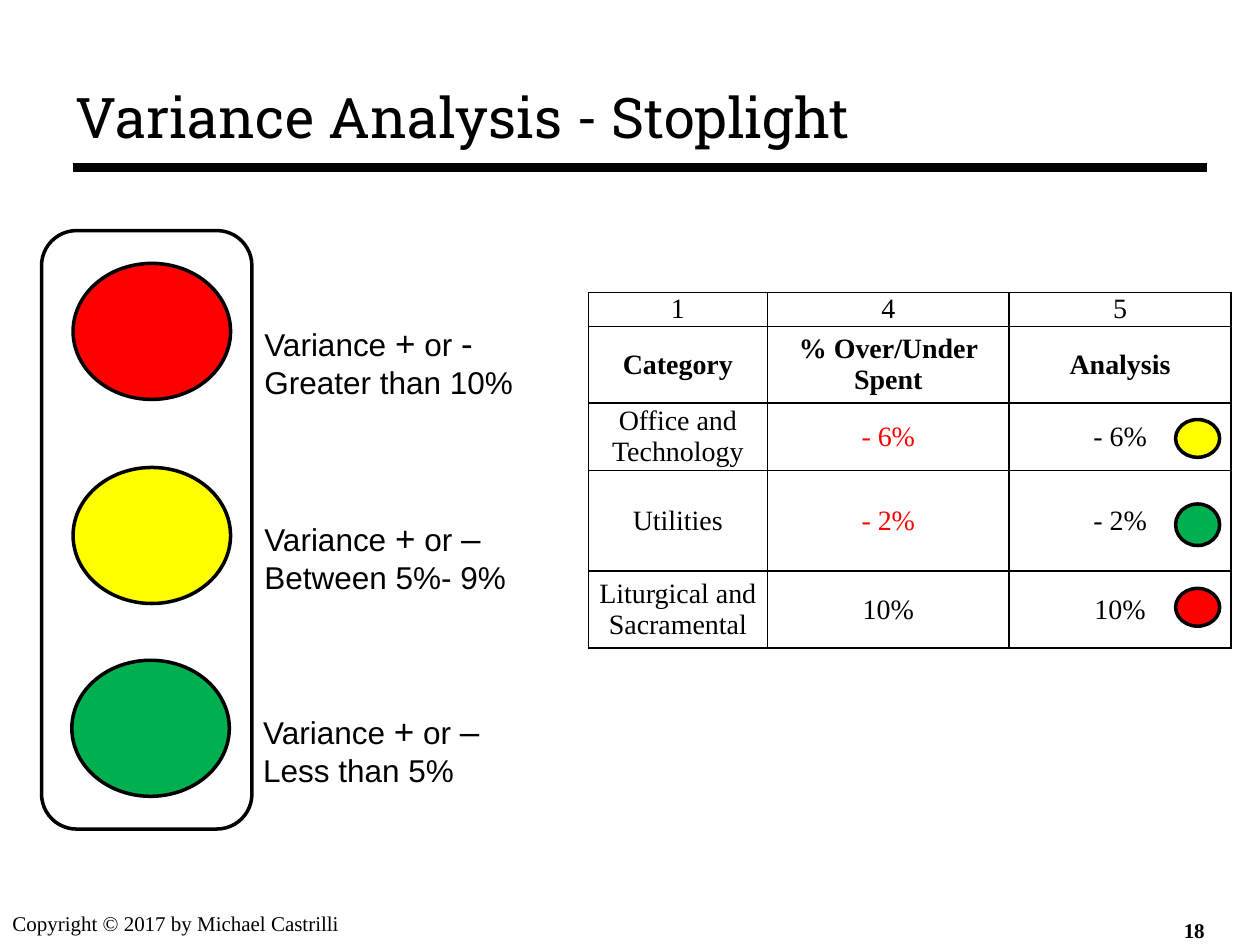
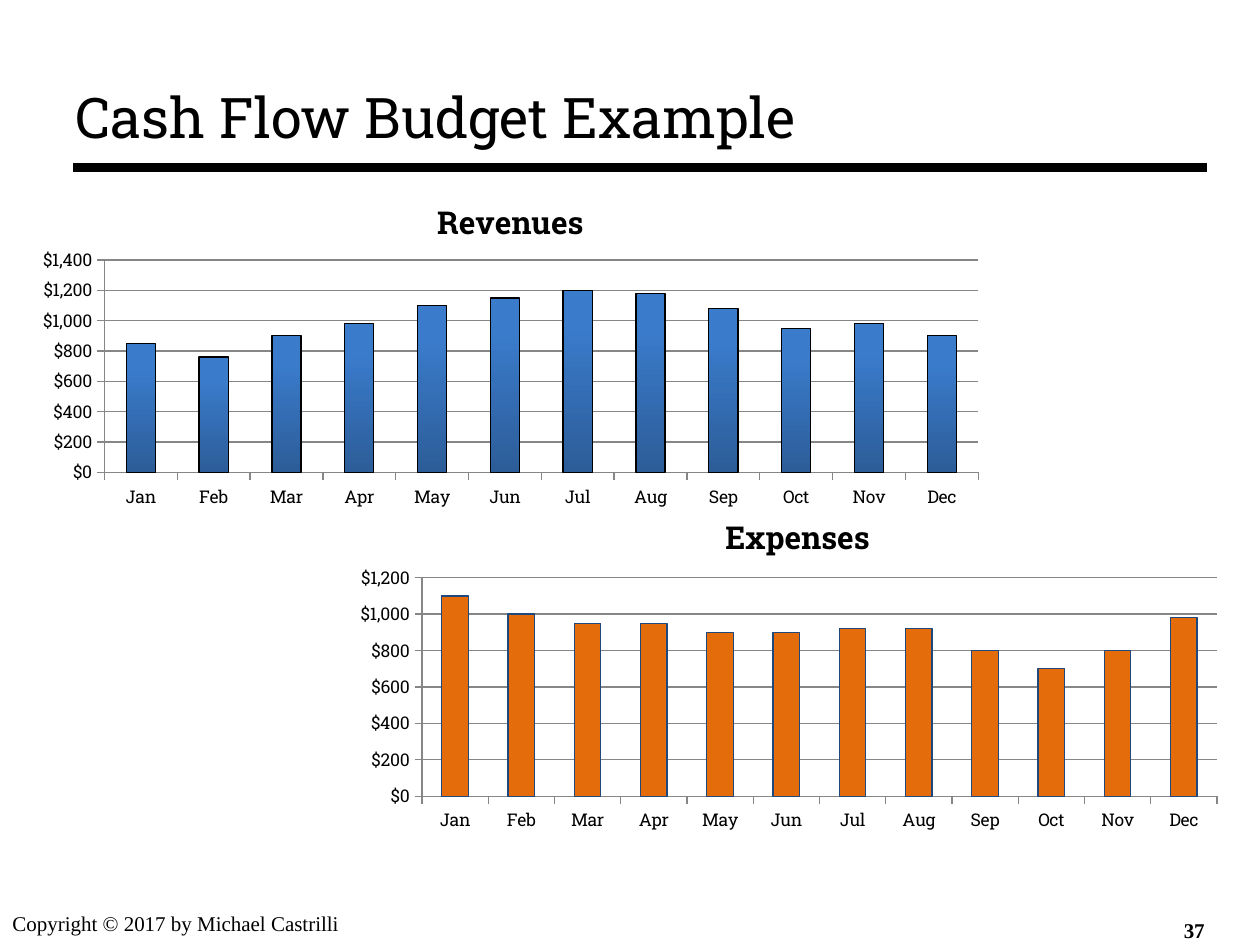
from pptx import Presentation
from pptx.chart.data import CategoryChartData
from pptx.dml.color import RGBColor
from pptx.enum.chart import XL_CHART_TYPE
from pptx.enum.shapes import MSO_CONNECTOR, MSO_SHAPE
from pptx.enum.text import MSO_ANCHOR, PP_ALIGN
from pptx.oxml import parse_xml
from pptx.oxml.ns import nsdecls, qn
from pptx.util import Inches, Pt

BLACK, WHITE, GREY = "000000", "FFFFFF", "868686"
RED, YELLOW, GREEN = "FF0000", "FFFF00", "00B050"
SLAB, SERIF, SANS = "Roboto Slab", "Times New Roman", "Arial"
MONTHS = "Jan Feb Mar Apr May Jun Jul Aug Sep Oct Nov Dec".split()
MONEY = '"$"#,##0;[Red]\\-"$"#,##0'


def tint(code):
    return RGBColor.from_string(code)


def put(item, **values):
    for key, value in values.items():
        setattr(item, key, value)


def inch(*sizes):
    return [Inches(size) for size in sizes]


def place(host, spot, **parts):
    for old in host.findall(qn("c:layout")):
        host.remove(old)
    tags = "".join(f'<c:{key} val="{value}"/>' for key, value in parts.items())
    host.insert(spot, parse_xml(
        f'<c:layout {nsdecls("c")}><c:manualLayout>{tags}</c:manualLayout></c:layout>'))


class Deck:
    def __init__(self):
        self.show = Presentation()
        put(self.show, slide_width=Inches(10), slide_height=Inches(7.5))
        self.slide = None

    def style(self, font, size, face, color=BLACK, bold=False):
        put(font, size=Pt(size), name=face, bold=bold)
        font.color.rgb = tint(color)

    def stroke(self, line, width, color=BLACK):
        line.color.rgb = tint(color)
        line.width = Pt(width)

    def page(self, title, number):
        self.slide = self.show.slides.add_slide(self.show.slide_layouts[5])
        self.text((0, 7.18, 4.08, 0.4),
                  [[("Copyright © 2017 by Michael Castrilli", 12)]], SERIF)
        self.rule(0.58, 1.33, 9.58)
        head = self.slide.shapes.title
        left, top, width, height = inch(0.5, 0.3, 9, 1.25)
        put(head, left=left, top=top, width=width, height=height)
        frame = head.text_frame
        put(frame, text=title, vertical_anchor=MSO_ANCHOR.MIDDLE)
        frame.paragraphs[0].alignment = PP_ALIGN.LEFT
        self.style(frame.paragraphs[0].runs[0].font, 32, SLAB)
        self.text((7.33, 7.18, 2.33, 0.4), [[(str(number), 12)]], SERIF, bold=True,
                  align=PP_ALIGN.RIGHT, anchor=MSO_ANCHOR.MIDDLE)

    def rule(self, left, top, right):
        line = self.slide.shapes.add_connector(
            MSO_CONNECTOR.STRAIGHT, *inch(left, top, right, top))
        self.stroke(line.line, 5)
        line._element.spPr.append(parse_xml(f'<a:effectLst {nsdecls("a")}/>'))

    def text(self, box, lines, face, bold=False, align=PP_ALIGN.LEFT,
             anchor=MSO_ANCHOR.TOP):
        frame = self.slide.shapes.add_textbox(*inch(*box)).text_frame
        put(frame, word_wrap=True, vertical_anchor=anchor)
        for index, line in enumerate(lines):
            para = frame.add_paragraph() if index else frame.paragraphs[0]
            para.alignment = align
            for words, size in line:
                run = para.add_run()
                run.text = words
                self.style(run.font, size, face, bold=bold)

    def shape(self, kind, box, fill=None):
        shape = self.slide.shapes.add_shape(kind, *inch(*box))
        shape.shadow.inherit = False
        if fill:
            shape.fill.solid()
            shape.fill.fore_color.rgb = tint(fill)
        else:
            shape.fill.background()
        self.stroke(shape.line, 2)

    def light(self, box, fill):
        self.shape(MSO_SHAPE.OVAL, box, fill)

    def cell(self, cell, words, color, bold):
        put(cell, text=words, vertical_anchor=MSO_ANCHOR.MIDDLE,
            margin_left=Inches(0.07), margin_right=Inches(0.07),
            margin_top=0, margin_bottom=0)
        para = cell.text_frame.paragraphs[0]
        para.alignment = PP_ALIGN.CENTER
        self.style(para.runs[0].font, 16, SERIF, color, bold)
        props = cell._tc.get_or_add_tcPr()
        for side in "LRTB":
            props.append(parse_xml(
                f'<a:ln{side} {nsdecls("a")} w="{Pt(1)}"><a:solidFill>'
                f'<a:srgbClr val="{BLACK}"/></a:solidFill></a:ln{side}>'))
        cell.fill.background()

    def table(self, box, widths, heights, rows):
        table = self.slide.shapes.add_table(
            len(rows), len(widths), *inch(*box)).table
        put(table, first_row=False, horz_banding=False)
        for column, width in zip(table.columns, inch(*widths)):
            column.width = width
        for row, height in zip(table.rows, inch(*heights)):
            row.height = height
        for r, row in enumerate(rows):
            for c, words in enumerate(row):
                color = RED if c == 1 and words.startswith("-") else BLACK
                self.cell(table.cell(r, c), words, color, r == 1)

    def chart(self, box, name, values, top, fills, edge):
        data = CategoryChartData(number_format=MONEY)
        data.categories = MONTHS
        data.add_series(name, values)
        chart = self.slide.shapes.add_chart(
            XL_CHART_TYPE.COLUMN_CLUSTERED, *inch(*box), data).chart
        put(chart, has_legend=False, has_title=True)
        self.style(chart.font, 10, SLAB)
        frame = chart.chart_title.text_frame
        frame.text = name
        self.style(frame.paragraphs[0].runs[0].font, 18, SLAB, bold=True)
        place(chart.chart_title._element, 1, xMode="edge", yMode="edge", x=0.42, y=0.07)
        place(chart._chartSpace.chart.plotArea, 0, layoutTarget="inner",
              xMode="edge", yMode="edge", x=0.085, y=0.267, w=0.895, h=0.613)
        axis = chart.value_axis
        put(axis, minimum_scale=0, maximum_scale=top, major_unit=200,
            has_major_gridlines=True)
        put(axis.tick_labels, number_format=MONEY, number_format_is_linked=False)
        for line in (axis.format.line, axis.major_gridlines.format.line,
                     chart.category_axis.format.line):
            self.stroke(line, 0.75, GREY)
        plot = chart.plots[0]
        put(plot, gap_width=150, vary_by_categories=False)
        bars = plot.series[0].format
        if len(fills) > 1:
            bars.fill.gradient()
            bars.fill.gradient_angle = 90
            for stop, fill in zip(bars.fill.gradient_stops, fills):
                stop.color.rgb = tint(fill)
            bars.fill.gradient_stops[1].position = 0.8
        else:
            bars.fill.solid()
            bars.fill.fore_color.rgb = tint(fills[0])
        self.stroke(bars.line, 0.75, edge)


def stoplight(deck):
    deck.page("Variance Analysis - Stoplight", 18)
    lamps = [(0.58, 2.09, RED, 2.5, "-", "Greater than 10%"),
             (0.58, 3.71, YELLOW, 4.05, "–", "Between 5%- 9%"),
             (0.57, 5.24, GREEN, 5.58, "–", "Less than 5%")]
    for left, top, fill, height, sign, range_text in lamps:
        deck.light((left, top, 1.25, 1.08), fill)
        deck.text((left + 1.42, height, 2.67, 0.74),
                  [[("Variance ", 18), ("+", 20), (" or ", 18), (sign, 20)],
                   [(range_text, 18)]], SANS)
    deck.shape(MSO_SHAPE.ROUNDED_RECTANGLE, (0.33, 1.83, 1.67, 4.75))
    deck.table((4.67, 2.32, 5.1, 2.82), (1.42, 1.92, 1.76),
               (0.27, 0.61, 0.53, 0.8, 0.61),
               [("1", "4", "5"),
                ("Category", "% Over/Under Spent", "Analysis"),
                ("Office and Technology", "- 6%", "- 6%"),
                ("Utilities", "- 2%", "- 2%"),
                ("Liturgical and Sacramental", "10%", "10%")])
    for top, height, fill in [(4.67, 0.3, RED), (3.33, 0.3, YELLOW), (4, 0.33, GREEN)]:
        deck.light((9.33, top, 0.35, height), fill)


def cash_flow(deck):
    deck.page("Cash Flow Budget Example", 37)
    deck.chart((2.75, 3.83, 7.05, 2.83), "Expenses",
               (1100, 1000, 950, 950, 900, 900, 920, 920, 800, 700, 800, 980),
               1200, ["E46C0A"], "1F497D")
    deck.chart((0.17, 1.33, 7.75, 2.75), "Revenues",
               (850, 760, 900, 980, 1100, 1150, 1200, 1180, 1080, 950, 980, 900),
               1400, ["2C5D98", "3A7BCB"], BLACK)


def main():
    deck = Deck()
    stoplight(deck)
    cash_flow(deck)
    deck.show.save("out.pptx")


if __name__ == "__main__":
    main()
